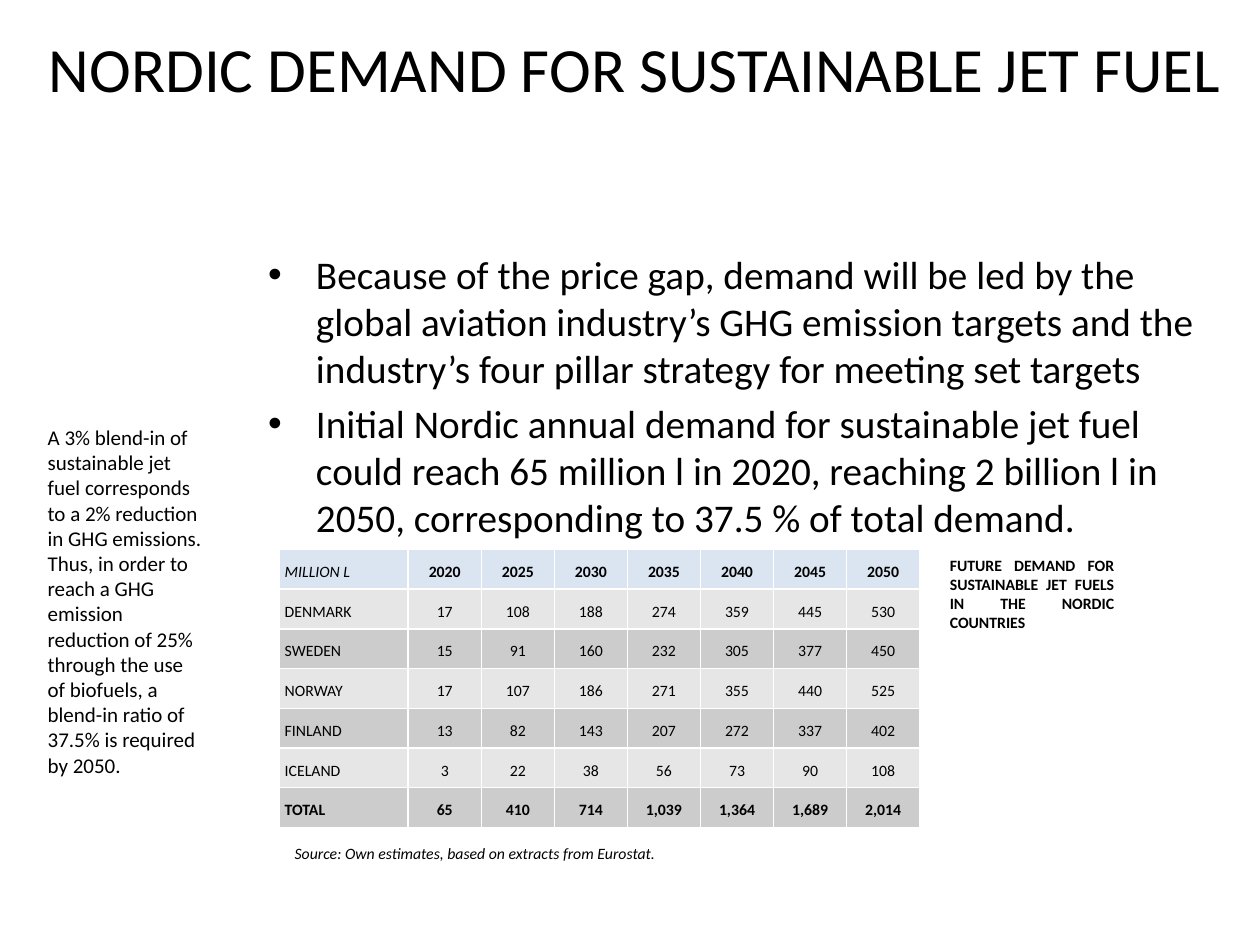
"""Build the slide on Nordic demand for sustainable jet fuel."""
from dataclasses import dataclass

from lxml.etree import SubElement as Sub
from pptx import Presentation
from pptx.dml.color import RGBColor as RGB
from pptx.enum.text import MSO_ANCHOR as Anchor, MSO_AUTO_SIZE as Auto, PP_ALIGN as Align
from pptx.oxml.ns import qn
from pptx.util import Inches, Pt


@dataclass(frozen=True)
class Theme:
    font: str = "Calibri"
    ink: str = "000000"
    line: str = "FFFFFF"
    head: str = "DBE5F1"
    bands: tuple = ("E6E6E6", "CCCCCC")
    title: float = 36
    body: float = 22.4
    side: float = 12
    small: float = 9


theme = Theme()


def style(para, size, align=Align.LEFT, bold=False, italic=False):
    para.alignment = align
    font = para.font
    font.name, font.size = theme.font, Pt(size)
    font.bold, font.italic = bold, italic
    font.color.rgb = RGB.from_string(theme.ink)


def add_text(box, lines, size, anchor=Anchor.TOP, auto=Auto.SHAPE_TO_FIT_TEXT, **look):
    frame = slide.shapes.add_textbox(*map(Inches, box)).text_frame
    frame.word_wrap, frame.auto_size = True, auto
    frame.vertical_anchor = anchor
    frame.text = "\n".join(lines)
    for para in frame.paragraphs:
        style(para, size, **look)
    return frame


deck = Presentation()
deck.slide_width, deck.slide_height = Inches(10), Inches(7.5)
slide = deck.slides.add_slide(deck.slide_layouts[6])

add_text((0.12, 0.26, 9.84, 0.55), ["NORDIC DEMAND FOR SUSTAINABLE JET FUEL"],
         theme.title, Anchor.MIDDLE, Auto.NONE, align=Align.CENTER)

points = [
    "Because of the price gap, demand will be led by the global aviation industry’s GHG "
    "emission targets and the industry’s four pillar strategy for meeting set targets",
    "Initial Nordic annual demand for sustainable jet fuel could reach 65 million l in 2020, "
    "reaching 2 billion l in 2050, corresponding to 37.5 % of total demand.",
]
body = add_text((2.03, 1.94, 7.7, 2.28), points, theme.body, auto=Auto.NONE)
for para in body.paragraphs:
    para.space_before = Pt(theme.body * 0.2)
    props = para._p.get_or_add_pPr()
    props.set("marL", str(Inches(0.38)))
    props.set("indent", str(Inches(-0.38)))
    Sub(props, qn("a:buFont"), typeface="Arial")
    Sub(props, qn("a:buChar"), char="•")
    props.append(props.find(qn("a:defRPr")))

rows = [
    ("MILLION L", "2020", "2025", "2030", "2035", "2040", "2045", "2050"),
    ("DENMARK", "17", "108", "188", "274", "359", "445", "530"),
    ("SWEDEN", "15", "91", "160", "232", "305", "377", "450"),
    ("NORWAY", "17", "107", "186", "271", "355", "440", "525"),
    ("FINLAND", "13", "82", "143", "207", "272", "337", "402"),
    ("ICELAND", "3", "22", "38", "56", "73", "90", "108"),
    ("TOTAL", "65", "410", "714", "1,039", "1,364", "1,689", "2,014"),
]
last = len(rows) - 1
place = map(Inches, (2.22, 4.36, 5.06, 2.21))
table = slide.shapes.add_table(len(rows), len(rows[0]), *place).table
table.first_row = table.horz_banding = False
for c, col in enumerate(table.columns):
    col.width = Inches(0.58 if c else 1.02)

for r, row in enumerate(rows):
    for c, text in enumerate(row):
        cell = table.cell(r, c)
        cell.text = text
        cell.vertical_anchor = Anchor.MIDDLE
        cell.margin_left = cell.margin_right = Inches(0.04)
        cell.margin_top = cell.margin_bottom = 0
        props = cell._tc.get_or_add_tcPr()
        for side in "LRTB":
            edge = Sub(props, qn(f"a:ln{side}"), w=str(Pt(1)))
            Sub(Sub(edge, qn("a:solidFill")), qn("a:srgbClr"), val=theme.line)
        cell.fill.solid()
        cell.fill.fore_color.rgb = RGB.from_string(theme.bands[(r - 1) % 2] if r else theme.head)
        para = cell.text_frame.paragraphs[0]
        para.line_spacing = 1.3
        corner = r == c == 0
        style(para, theme.small, Align.CENTER if c else Align.LEFT,
              bold=r in (0, last) and not corner, italic=corner)

add_text((7.44, 4.36, 1.5, 0.71),
         ["FUTURE DEMAND FOR SUSTAINABLE JET FUELS IN THE NORDIC COUNTRIES"],
         theme.small, Anchor.MIDDLE, align=Align.JUSTIFY, bold=True)
add_text((2.24, 6.65, 5.04, 0.25),
         ["Source: Own estimates, based on extracts from Eurostat."],
         theme.small, align=Align.JUSTIFY, italic=True)
add_text((0.28, 3.32, 1.42, 3.13), [
    "A 3% blend-in of sustainable jet fuel corresponds to a 2% reduction in GHG emissions.",
    "Thus, in order to reach a GHG emission reduction of 25% through the use of biofuels, "
    "a blend-in ratio of 37.5% is required by 2050.",
], theme.side)

deck.save("out.pptx")
